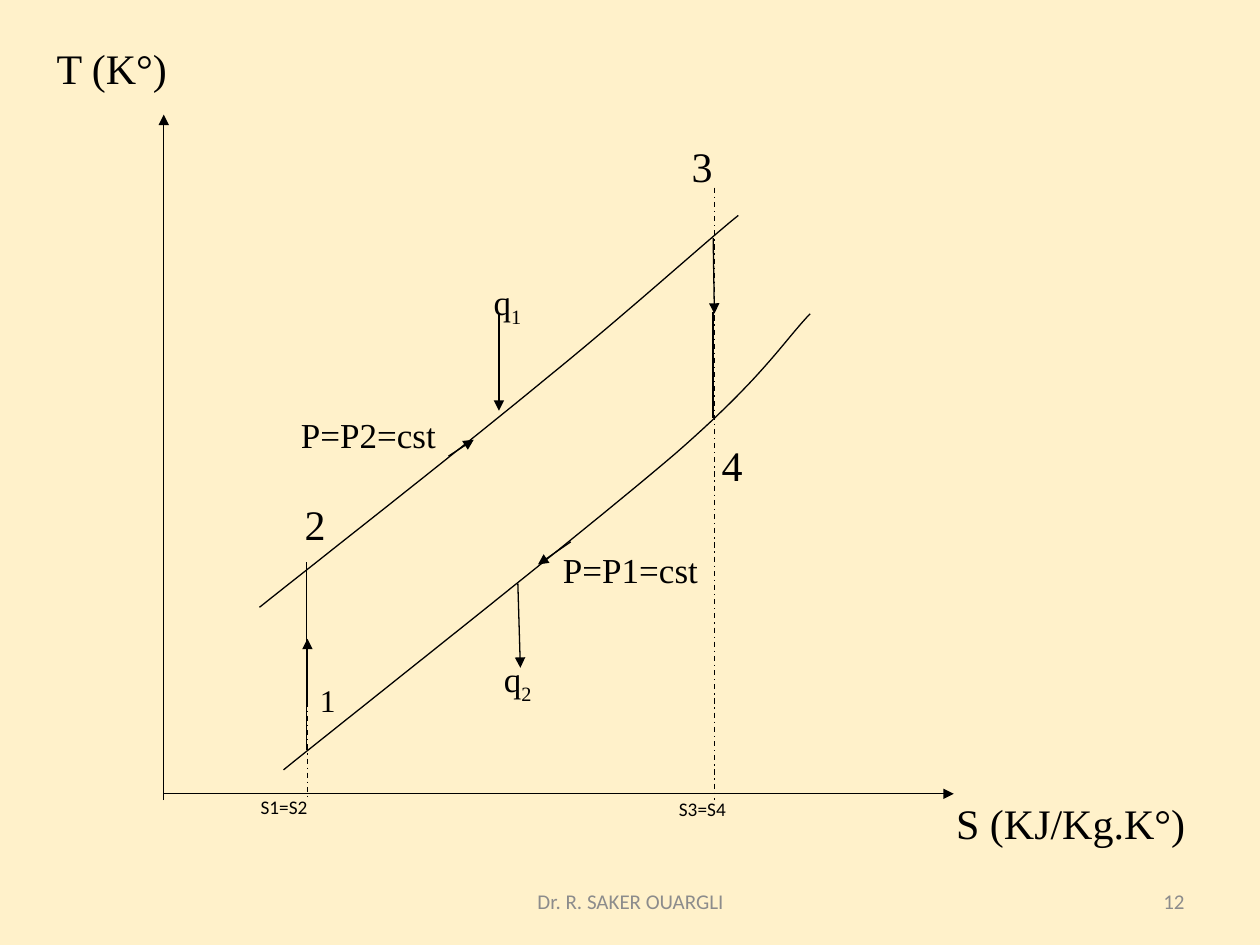
from dataclasses import dataclass

from lxml.etree import SubElement
from pptx import Presentation
from pptx.dml.color import RGBColor
from pptx.enum.dml import MSO_LINE
from pptx.enum.shapes import MSO_CONNECTOR
from pptx.enum.text import MSO_ANCHOR, PP_ALIGN
from pptx.oxml.ns import qn
from pptx.util import Inches, Pt


@dataclass(frozen=True)
class Theme:
    background: RGBColor = RGBColor(0xFF, 0xF1, 0xCA)
    ink: RGBColor = RGBColor(0, 0, 0)
    muted: RGBColor = RGBColor(0x8C, 0x8C, 0x8C)
    serif: str = "Times New Roman"
    sans: str = "Calibri"
    large: int = 24
    medium: int = 20
    point: int = 18
    footer: int = 12
    small: int = 11
    line: float = 0.75


THEME = Theme()
WIDTH, HEIGHT = 10, 7.5

# Diagram landmarks, in inches
ORIGIN_X, ORIGIN_Y = 1.3, 6.3
LEFT_S, RIGHT_S = 2.44, 5.67  # entropy of 1-2 and of 3-4
AXIS_FOOT = 6.35

# Isobars: start point, then cubic segments (control, control, end)
ISOBARS = [
    [(2.25, 6.11), [(2.77, 5.69), (4.66, 4.2), (5.36, 3.6)],
     [(6.06, 2.99), (6.21, 2.72), (6.43, 2.49)]],
    [(2.06, 4.82), [(2.88, 4.17), (3.71, 3.52), (4.34, 3)],
     [(4.97, 2.49), (5.6, 1.92), (5.86, 1.71)]],
]
ARROWS = [
    ((ORIGIN_X, AXIS_FOOT), (ORIGIN_X, 0.91)),  # T axis
    ((ORIGIN_X, ORIGIN_Y), (7.57, ORIGIN_Y)),  # S axis
    ((LEFT_S, 5.59), (LEFT_S, 5.07)),  # compression
    ((5.66, 1.89), (RIGHT_S, 2.49)),  # expansion
    ((3.96, 2.49), (3.96, 3.26)),  # heat in
    ((4.11, 4.63), (4.13, 5.3)),  # heat out
    ((4.53, 4.3), (4.27, 4.48)),  # along P1
    ((3.56, 3.62), (3.76, 3.49)),  # along P2
]
SOLID_LINES = [((2.43, 5.95), (2.43, 4.46)), ((5.66, 2.48), (5.66, 3.32))]
DASHED_LINES = [((RIGHT_S, 1.49), (RIGHT_S, AXIS_FOOT)),
                ((LEFT_S, 5.57), (LEFT_S, AXIS_FOOT))]

# Labels: text, subscript, (left, top, width, height), size, font
LABELS = [
    ("P=P1=cst", "", (4.37, 4.3, 1.5, 0.78), THEME.medium, THEME.serif),
    ("q", "2", (3.9, 5.17, 0.52, 0.8), THEME.medium, THEME.serif),
    ("q", "1", (3.82, 2.18, 0.52, 0.8), THEME.medium, THEME.serif),
    ("3", "", (5.39, 1.07, 0.43, 0.8), THEME.large, THEME.serif),
    ("P=P2=cst", "", (2.29, 3.23, 1.34, 0.77), THEME.medium, THEME.serif),
    ("2", "", (2.32, 3.91, 0.57, 0.78), THEME.large, THEME.serif),
    ("S (KJ/Kg.K°)", "", (7.49, 6.28, 2.16, 0.89), THEME.large, THEME.serif),
    ("1", "", (2.44, 5.36, 0.43, 0.8), THEME.point, THEME.serif),
    ("S1=S2", "", (1.97, 6.26, 1.77, 0.81), THEME.small, THEME.sans),
    ("S3=S4", "", (5.29, 6.28, 0.93, 0.78), THEME.small, THEME.sans),
    ("4", "", (5.63, 3.44, 0.43, 0.8), THEME.large, THEME.serif),
    ("T (K°)", "", (0.35, 0.29, 1.45, 0.78), THEME.large, THEME.serif),
]
FOOTERS = [
    ("Dr. R. SAKER OUARGLI", (3.42, 6.95, 3.17, 0.4), PP_ALIGN.CENTER),
    ("12", (7.17, 6.95, 2.33, 0.4), PP_ALIGN.RIGHT),
]


def style_line(line):
    line.color.rgb = THEME.ink
    line.width = Pt(THEME.line)


def add_line(shapes, start, end, arrow=False, dashed=False):
    connector = shapes.add_connector(
        MSO_CONNECTOR.STRAIGHT, *map(Inches, (*start, *end)))
    style_line(connector.line)
    if dashed:
        connector.line.dash_style = MSO_LINE.DASH_DOT
    properties = connector._element.spPr
    if arrow:
        SubElement(properties.find(qn("a:ln")), qn("a:tailEnd"), type="triangle")
    SubElement(properties, qn("a:effectLst"))


def curve_points(start, segments, steps=24):
    """Points along a chain of cubic curves, start included."""
    yield start
    for first, second, end in segments:
        for step in range(1, steps + 1):
            t = step / steps
            u = 1 - t
            yield tuple(
                u**3 * a + 3 * u * u * t * b + 3 * u * t * t * c + t**3 * d
                for a, b, c, d in zip(start, first, second, end))
        start = end


def add_isobar(shapes, start, *segments):
    # The builder rounds to whole units, so the points are given in EMU
    first, *others = [(Inches(x), Inches(y))
                      for x, y in curve_points(start, segments)]
    builder = shapes.build_freeform(*first, scale=1.0)
    builder.add_line_segments(others, close=False)
    shape = builder.convert_to_shape()
    shape.shadow.inherit = False
    shape.fill.background()
    style_line(shape.line)


def add_run(paragraph, text, size, font, color):
    run = paragraph.add_run()
    run.text = text
    run.font.size = Pt(size)
    run.font.name = font
    run.font.color.rgb = color
    return run


def add_box(shapes, place, align, anchor=MSO_ANCHOR.TOP):
    frame = shapes.add_textbox(*map(Inches, place)).text_frame
    frame.word_wrap = True
    frame.vertical_anchor = anchor
    paragraph = frame.paragraphs[0]
    paragraph.alignment = align
    return paragraph


def add_label(shapes, text, subscript, place, size, font):
    paragraph = add_box(shapes, place, PP_ALIGN.JUSTIFY)
    paragraph.space_after = Pt(10)
    add_run(paragraph, text, size, font, THEME.ink)
    if subscript:
        run = add_run(paragraph, subscript, size, font, THEME.ink)
        run.font._element.set("baseline", "-25000")


def main():
    presentation = Presentation()
    presentation.slide_width = Inches(WIDTH)
    presentation.slide_height = Inches(HEIGHT)
    slide = presentation.slides.add_slide(presentation.slide_layouts[6])
    slide.background.fill.solid()
    slide.background.fill.fore_color.rgb = THEME.background

    # Footer and slide number
    for text, place, align in FOOTERS:
        paragraph = add_box(slide.shapes, place, align, MSO_ANCHOR.MIDDLE)
        add_run(paragraph, text, THEME.footer, THEME.sans, THEME.muted)

    # T-S diagram
    diagram = slide.shapes.add_group_shape().shapes
    for isobar in ISOBARS:
        add_isobar(diagram, *isobar)
    for start, end in ARROWS:
        add_line(diagram, start, end, arrow=True)
    for start, end in SOLID_LINES:
        add_line(diagram, start, end)
    for start, end in DASHED_LINES:
        add_line(diagram, start, end, dashed=True)
    for label in LABELS:
        add_label(diagram, *label)

    presentation.save("out.pptx")


if __name__ == "__main__":
    main()
